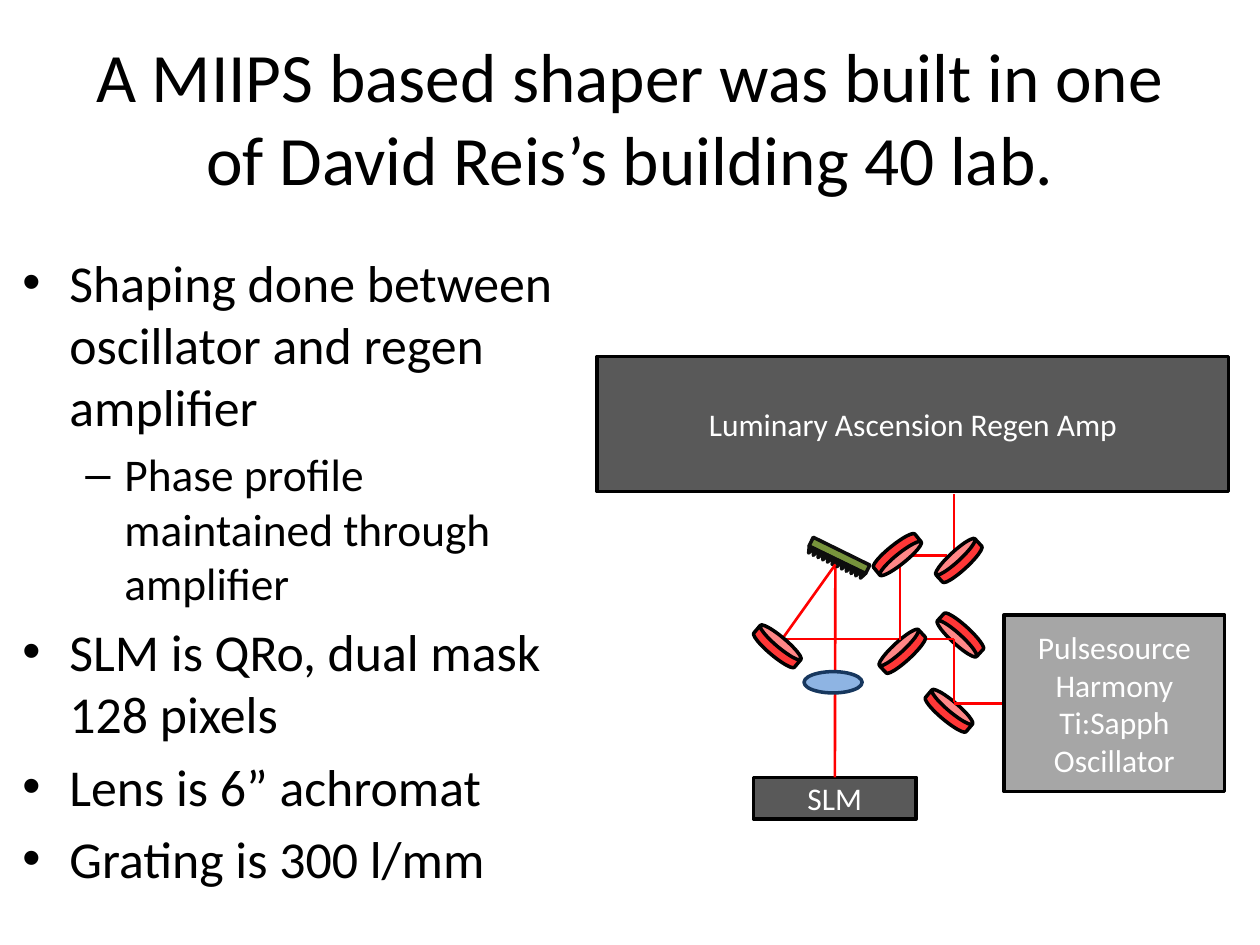
from collections import namedtuple

from lxml.etree import SubElement
from pptx import Presentation
from pptx.dml.color import RGBColor
from pptx.enum.shapes import MSO_CONNECTOR, MSO_SHAPE
from pptx.enum.text import MSO_ANCHOR, PP_ALIGN
from pptx.oxml.ns import qn
from pptx.util import Cm, Pt

BLACK = RGBColor(0x00, 0x00, 0x00)
WHITE = RGBColor(0xFF, 0xFF, 0xFF)
DARK_GREY = RGBColor(0x59, 0x59, 0x59)
LIGHT_GREY = RGBColor(0xA6, 0xA6, 0xA6)
BEAM_RED = RGBColor(0xFF, 0x00, 0x00)
MIRROR_RED = RGBColor(0xFF, 0x37, 0x37)
LENS_BLUE = RGBColor(0x8E, 0xB4, 0xE3)
LENS_EDGE = RGBColor(0x17, 0x37, 0x5E)
GRATING_GREEN = RGBColor(0x77, 0x93, 0x3C)
GRATING_EDGE = RGBColor(0x0D, 0x0D, 0x0D)
FONT = "Calibri"

Box = namedtuple("Box", "left top width height")
Level = namedtuple("Level", "size margin hanging bullet")

LEVELS = [Level(29.6, 0.95, 0.95, "•"), Level(25.9, 2.06, 0.79, "–")]
POINTS = [
    (0, "Shaping done between oscillator and regen amplifier"),
    (1, "Phase profile maintained through amplifier"),
    (0, "SLM is QRo, dual mask 128 pixels"),
    (0, "Lens is 6” achromat"),
    (0, "Grating is 300 l/mm"),
]

BACK_MIRRORS = [(7.09, 7.14, 40.1), (7.32, 5.61, 222.4)]
MIDDLE_MIRROR = (6.15, 5.94, 317.4)
FRONT_MIRRORS = [(3.63, 5.84, 40.1), (6.05, 3.99, 141.1), (7.29, 4.11, 317.4)]
LOWER_BEAMS = [(9.93, 6.99, 7.19, 6.99), (7.19, 5.69, 3.76, 5.69)]
UPPER_BEAMS = [
    (3.73, 5.69, 4.8, 4.19),
    (7.19, 4.01, 7.19, 2.77),
    (6.1, 5.72, 6.1, 4.04),
    (7.06, 4.01, 6.15, 4.01),
    (7.19, 6.96, 7.19, 5.69),
]


def set_font(paragraph, size, color):
    """Format a whole paragraph."""
    paragraph.font.name = FONT
    paragraph.font.size = Pt(size)
    paragraph.font.color.rgb = color


def place(shape, box):
    """Move and size a shape to a box in centimetres."""
    shape.left, shape.top, shape.width, shape.height = map(Cm, box)


def add_title(page, box):
    """Fill and format the title placeholder."""
    title = page.shapes.title
    place(title, box)
    frame = title.text_frame
    frame.text = "A MIIPS based shaper was built in one of David Reis’s building 40 lab."
    frame.word_wrap = True
    frame.vertical_anchor = MSO_ANCHOR.MIDDLE
    frame.paragraphs[0].alignment = PP_ALIGN.CENTER
    set_font(frame.paragraphs[0], 39.6, BLACK)


def add_points(page, box):
    """Write the two-level bullet list."""
    frame = page.shapes.add_textbox(*map(Cm, box)).text_frame
    frame.word_wrap = True
    for index, (depth, text) in enumerate(POINTS):
        level = LEVELS[depth]
        paragraph = frame.add_paragraph() if index else frame.paragraphs[0]
        paragraph.text = text
        paragraph.level = depth
        properties = paragraph._p.get_or_add_pPr()
        properties.set("marL", str(Cm(level.margin)))
        properties.set("indent", str(-Cm(level.hanging)))
        SubElement(properties, qn("a:buFont"), typeface="Arial")
        SubElement(properties, qn("a:buChar"), char=level.bullet)
        if index:
            paragraph.space_before = Pt(round(level.size * 0.2, 1))
        set_font(paragraph, level.size, BLACK)


def add_part(page, kind, box, fill, edge=BLACK, rotation=0):
    """Draw one filled and outlined part."""
    part = page.shapes.add_shape(kind, *map(Cm, box))
    part.shadow.inherit = False
    part.fill.solid()
    part.fill.fore_color.rgb = fill
    part.line.color.rgb = edge
    part.line.width = Pt(2)
    part.rotation = rotation
    return part


def add_device(page, box, text, fill):
    """Draw a labelled instrument."""
    device = add_part(page, MSO_SHAPE.RECTANGLE, box, fill)
    frame = device.text_frame
    frame.text = text
    frame.word_wrap = True
    frame.vertical_anchor = MSO_ANCHOR.MIDDLE
    frame.paragraphs[0].alignment = PP_ALIGN.CENTER
    set_font(frame.paragraphs[0], 18, WHITE)
    return device


def add_centred(page, kind, x, y, width, height, **style):
    """Draw a part around its centre point."""
    return add_part(page, kind, Box(x - width / 2, y - height / 2, width, height), **style)


def add_mirror(page, box, x, y, rotation):
    """Draw a tilted mirror disc."""
    mirror = add_centred(page, MSO_SHAPE.CAN, box.left + x, box.top + y, 1.07, 0.41,
                         fill=MIRROR_RED, rotation=rotation)
    mirror.adjustments[0] = 0.5


def add_beam(page, box, start_x, start_y, end_x, end_y):
    """Draw a straight stretch of laser beam."""
    beam = page.shapes.add_connector(
        MSO_CONNECTOR.STRAIGHT, Cm(box.left + start_x), Cm(box.top + start_y),
        Cm(box.left + end_x), Cm(box.top + end_y))
    beam.line.color.rgb = BEAM_RED
    beam.line.width = Pt(1.5)
    SubElement(beam._element.spPr, qn("a:effectLst"))
    return beam


def add_grating(page, box, teeth=12, rotation=206.2):
    """Draw the grating bar with its row of teeth."""
    style = dict(fill=GRATING_GREEN, edge=GRATING_EDGE, rotation=rotation)
    add_centred(page, MSO_SHAPE.RECTANGLE, box.left + 4.88, box.top + 4.01, 1.27, 0.2, **style)
    for tooth in range(teeth):
        add_centred(page, MSO_SHAPE.ISOSCELES_TRIANGLE, box.left + 4.29 + 0.095 * tooth,
                    box.top + 3.9 + 0.046 * tooth, 0.1, 0.13, **style)


def add_optics(page, box):
    """Lay out the lasers, shaper optics and beams from back to front."""
    left, top = box.left, box.top
    add_device(page, Box(left, top, box.width, 2.72), "Luminary Ascension Regen Amp", DARK_GREY)
    modulator = add_device(page, Box(left + 3.15, top + 8.48, 3.28, 0.84), "SLM", DARK_GREY)
    for mirror in BACK_MIRRORS:
        add_mirror(page, box, *mirror)
    add_beam(page, box, 4.79, 8.48, 4.8, 4.19).begin_connect(modulator, 0)
    for beam in LOWER_BEAMS:
        add_beam(page, box, *beam)
    add_part(page, MSO_SHAPE.OVAL, Box(left + 4.17, top + 6.35, 1.17, 0.43), LENS_BLUE, LENS_EDGE)
    add_grating(page, box)
    add_mirror(page, box, *MIDDLE_MIRROR)
    for beam in UPPER_BEAMS:
        add_beam(page, box, *beam)
    add_device(page, Box(left + 8.2, top + 5.21, 4.45, 3.56),
               "Pulsesource Harmony Ti:Sapph Oscillator", LIGHT_GREY)
    for mirror in FRONT_MIRRORS:
        add_mirror(page, box, *mirror)


def main():
    """Build and save the deck."""
    deck = Presentation()
    deck.slide_width, deck.slide_height = Cm(25.4), Cm(19.05)
    page = deck.slides.add_slide(deck.slide_layouts[5])
    add_title(page, Box(1.27, 0.76, 22.86, 3.18))
    add_points(page, Box(0.2, 4.93, 11.63, 12.57))
    add_optics(page, Box(12.04, 7.19, 12.73, 9.32))
    deck.save("out.pptx")


if __name__ == "__main__":
    main()
